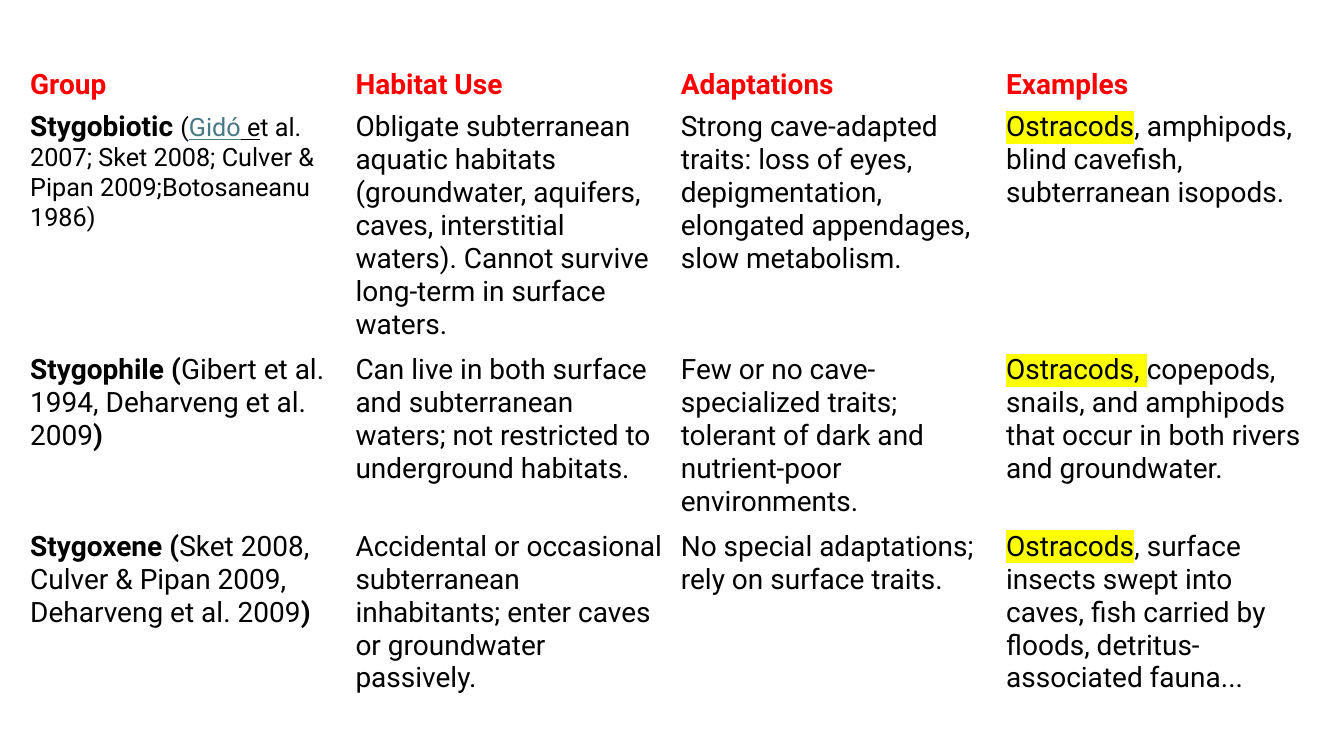
from lxml.etree import SubElement
from pptx import Presentation
from pptx.dml.color import RGBColor
from pptx.enum.text import MSO_ANCHOR
from pptx.oxml.ns import qn
from pptx.util import Cm, Pt

RED = RGBColor(0xFF, 0x00, 0x00)
BLACK = RGBColor(0x00, 0x00, 0x00)
LINK_TEAL = RGBColor(0x46, 0x78, 0x86)
YELLOW = RGBColor(0xFF, 0xFF, 0x00)

HEADINGS = ["Group", "Habitat Use", "Adaptations", "Examples"]
ROW_HEIGHTS = [1.12, 6.12, 4.45, 5.28]
COLUMN_WIDTH = 8.2

# Each cell is a list of runs: the text and the ways it differs from plain text.
BOLD = {"bold": True}
MARKED = {"highlight": YELLOW}
SMALL = {"size": 18}
GROUPS = [
    [
        [
            ("Stygobiotic ", BOLD),
            ("(", SMALL),
            ("Gidó", {"size": 18, "color": LINK_TEAL, "underline": True}),
            (" e", {"size": 18, "underline": True}),
            ("t al. 2007; Sket 2008; Culver & Pipan 2009;Botosaneanu 1986)", SMALL),
        ],
        [("Obligate subterranean aquatic habitats (groundwater, aquifers, caves, "
          "interstitial waters). Cannot survive long-term in surface waters.", {})],
        [("Strong cave-adapted traits: loss of eyes, depigmentation, "
          "elongated appendages, slow metabolism.", {})],
        [("Ostracods", MARKED),
         (", amphipods, blind cavefish, subterranean isopods.", {})],
    ],
    [
        [("Stygophile (", BOLD),
         ("Gibert et al. 1994, Deharveng et al. 2009", {}),
         (")", BOLD)],
        [("Can live in both surface and subterranean waters; "
          "not restricted to underground habitats.", {})],
        [("Few or no cave-specialized traits; tolerant of dark and "
          "nutrient-poor environments.", {})],
        [("Ostracods, ", MARKED),
         ("copepods, snails, and amphipods that occur in both rivers "
          "and groundwater.", {})],
    ],
    [
        [("Stygoxene (", BOLD),
         ("Sket 2008, Culver & Pipan 2009, Deharveng et al. 2009", {}),
         (")", BOLD)],
        [("Accidental or occasional subterranean inhabitants; "
          "enter caves or groundwater passively.", {})],
        [("No special adaptations; rely on surface traits.", {})],
        [("Ostracods", MARKED),
         (", surface insects swept into caves, fish carried by floods, "
          "detritus-associated fauna...", {})],
    ],
]


def add_run(paragraph, text, size=20, color=BLACK, bold=False, underline=False,
            highlight=None):
    run = paragraph.add_run()
    run.text = text
    font = run.font
    font.size = Pt(size)
    font.bold = bold
    font.underline = underline
    font.color.rgb = color
    if highlight is not None:
        # The highlight has to stand between the fill and the typeface.
        properties = run._r.get_or_add_rPr()
        mark = SubElement(properties, qn("a:highlight"))
        SubElement(mark, qn("a:srgbClr"), val=str(highlight))
    font.name = "Roboto"


presentation = Presentation()
presentation.slide_width = Cm(33.87)
presentation.slide_height = Cm(19.05)
slide = presentation.slides.add_slide(presentation.slide_layouts[6])

heading_row = [[(heading, {"bold": True, "color": RED})] for heading in HEADINGS]
rows = [heading_row] + GROUPS

table = slide.shapes.add_table(
    len(rows), len(HEADINGS), Cm(0.56), Cm(1.57),
    Cm(COLUMN_WIDTH * len(HEADINGS)), Cm(sum(ROW_HEIGHTS)),
).table
table.first_row = False
table.horz_banding = False
for column in table.columns:
    column.width = Cm(COLUMN_WIDTH)

for row_index, (cells, height) in enumerate(zip(rows, ROW_HEIGHTS)):
    table.rows[row_index].height = Cm(height)
    for column_index, runs in enumerate(cells):
        cell = table.cell(row_index, column_index)
        cell.fill.background()
        cell.margin_left = cell.margin_right = Cm(0.2)
        cell.margin_top = cell.margin_bottom = Cm(0.1)
        cell.vertical_anchor = MSO_ANCHOR.MIDDLE if row_index == 0 else MSO_ANCHOR.TOP
        for text, style in runs:
            add_run(cell.text_frame.paragraphs[0], text, **style)

presentation.save("out.pptx")
